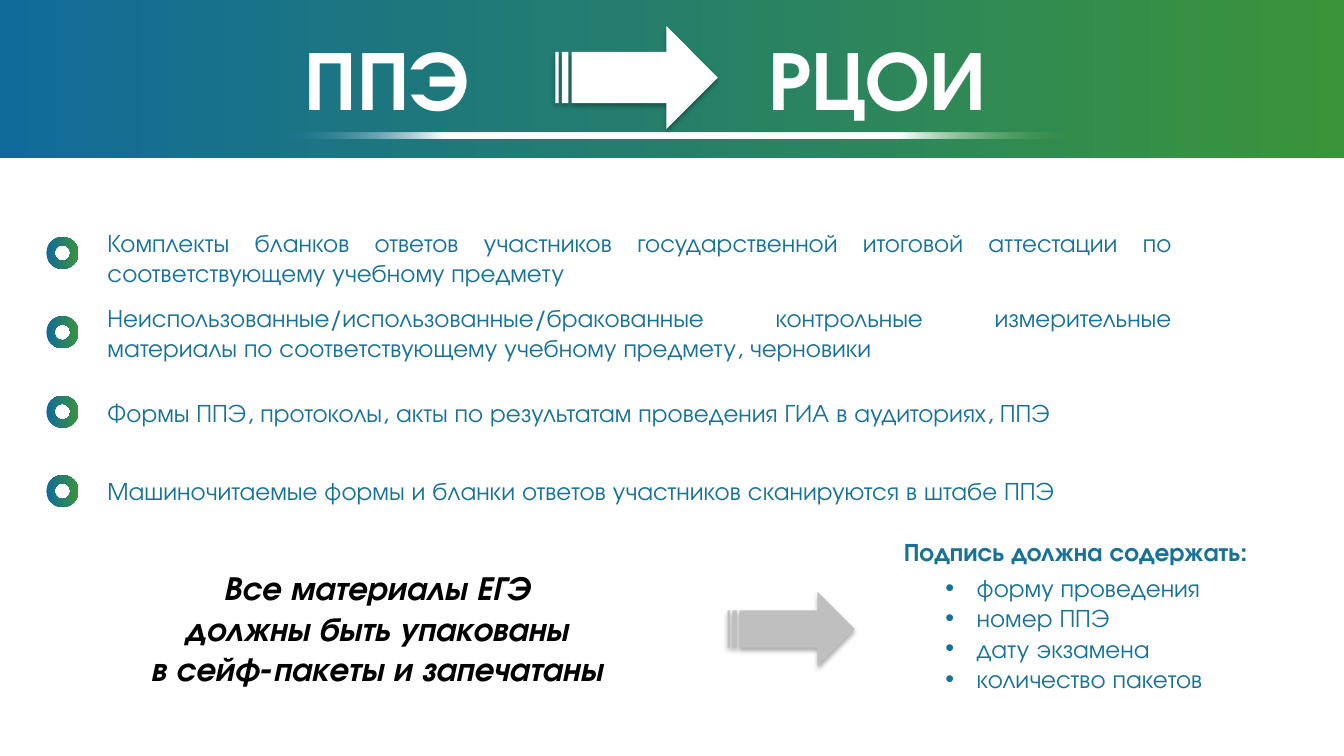
import lxml.etree
import pptx
import pptx.dml.color
import pptx.enum.shapes
import pptx.enum.text
import pptx.oxml.ns
import pptx.util
from pptx.util import Cm

FONT = "TeX Gyre Adventor"
BLUE, GREEN, TEXT_BLUE = "116B9A", "3B943A", "187298"
SHAPES = pptx.enum.shapes.MSO_SHAPE
ALIGN = pptx.enum.text.PP_ALIGN
ANCHOR = pptx.enum.text.MSO_ANCHOR

DOCUMENTS = [
    (5.61, "Комплекты бланков ответов участников государственной итоговой аттестации "
           "по соответствующему учебному предмету"),
    (7.49, "Неиспользованные/использованные/бракованные контрольные измерительные "
           "материалы по соответствующему учебному предмету, черновики"),
    (9.88, "Формы ППЭ, протоколы, акты по результатам проведения ГИА в аудиториях, ППЭ"),
    (11.86, "Машиночитаемые формы и бланки ответов участников сканируются в штабе ППЭ"),
]
PACKING = ["Все материалы ЕГЭ", "должны быть упакованы", "в сейф-пакеты и запечатаны"]
SIGNATURE = ["форму проведения", "номер ППЭ", "дату экзамена", "количество пакетов"]


def color(hex_value):
    """Turn a hex string into a colour."""
    return pptx.dml.color.RGBColor.from_string(hex_value)


def child(parent, tag, **attributes):
    """Append a DrawingML element to a parent."""
    element = lxml.etree.SubElement(parent, pptx.oxml.ns.qn(tag))
    for name, value in attributes.items():
        element.set(name, str(value))
    return element


def fill_gradient(shape, stops):
    """Fill a shape left to right with (percent, colour, opacity) stops."""
    shape.fill.gradient()
    shape.fill.gradient_angle = 0
    stop_list = next(shape._element.spPr.iter(pptx.oxml.ns.qn("a:gsLst")))
    for old_stop in list(stop_list):
        stop_list.remove(old_stop)
    for percent, hex_value, opacity in stops:
        stop = child(stop_list, "a:gs", pos=percent * 1000)
        tint = child(stop, "a:srgbClr", val=hex_value)
        if opacity < 100:
            child(tint, "a:alpha", val=opacity * 1000)


def place(shape, left, top, width, height):
    """Move and size a shape in centimetres."""
    shape.left, shape.top = Cm(left), Cm(top)
    shape.width, shape.height = Cm(width), Cm(height)


def add_figure(slide, preset, left, top, width, height):
    """Add a preset shape without line or shadow."""
    figure = slide.shapes.add_shape(preset, Cm(left), Cm(top), Cm(width), Cm(height))
    figure.line.fill.background()
    figure.shadow.inherit = False
    return figure


def add_arrow(slide, left, top, width, height, hex_value):
    """Add a striped arrow with a soft shadow below it."""
    arrow = add_figure(slide, SHAPES.STRIPED_RIGHT_ARROW, left, top, width, height)
    arrow.fill.solid()
    arrow.fill.fore_color.rgb = color(hex_value)
    effects = arrow._element.spPr.find(pptx.oxml.ns.qn("a:effectLst"))
    shadow = child(effects, "a:outerShdw", blurRad=pptx.util.Pt(3.5),
                   dist=pptx.util.Pt(2.2), dir=5400000, algn="t", rotWithShape=0)
    child(child(shadow, "a:srgbClr", val="000000"), "a:alpha", val=32000)


def write(frame, lines, size, hex_value, align, bold=False, italic=False, bullet=None):
    """Write one formatted paragraph per line."""
    frame.word_wrap = True
    frame.auto_size = pptx.enum.text.MSO_AUTO_SIZE.NONE
    for index, line in enumerate(lines):
        paragraph = frame.paragraphs[0] if index == 0 else frame.add_paragraph()
        paragraph.text = line
        paragraph.alignment = align
        paragraph.space_before = pptx.util.Pt(0)
        if bullet:
            properties = paragraph._p.get_or_add_pPr()
            properties.set("marL", str(Cm(0.79)))
            properties.set("indent", str(-Cm(0.79)))
            child(properties, "a:buFont", typeface="Arial")
            child(properties, "a:buChar", char=bullet)
        style_font(paragraph.font, size, hex_value, bold, italic)


def style_font(font, size, hex_value, bold, italic):
    """Set the face, size, colour and weight of a font."""
    font.name = FONT
    font.size = pptx.util.Pt(size)
    font.bold, font.italic = bold, italic
    font.color.rgb = color(hex_value)


def add_text(slide, left, top, width, height, lines, *style, **options):
    """Add a wrapped text box."""
    box = slide.shapes.add_textbox(Cm(left), Cm(top), Cm(width), Cm(height))
    write(box.text_frame, lines, *style, **options)


def add_banner(slide):
    """Make the title a gradient banner with an arrow and a glowing rule."""
    banner = slide.shapes.title
    place(banner, 0, -0.1, 33.87, 4.09)
    fill_gradient(banner, [(0, BLUE, 100), (100, GREEN, 100)])
    frame = banner.text_frame
    frame.vertical_anchor = ANCHOR.MIDDLE
    frame.margin_left = Cm(7.68)
    properties = frame.paragraphs[0]._p.get_or_add_pPr()
    child(child(properties, "a:tabLst"), "a:tab", pos=Cm(11.68), algn="l")
    write(frame, ["ППЭ\tРЦОИ"], 60, "FFFFFF", ALIGN.LEFT, bold=True)
    rule = add_figure(slide, SHAPES.RECTANGLE, 6.73, 3.35, 20.42, 0.13)
    fill_gradient(rule, [(1, BLUE, 0), (22, "FFFFFF", 100),
                         (78, "FFFFFF", 100), (100, GREEN, 0)])
    add_arrow(slide, 14, 0.66, 4.09, 2.59, "FFFFFF")


def add_documents(slide):
    """List the documents, each beside a ring marker."""
    for index, (top, document) in enumerate(DOCUMENTS):
        ring = add_figure(slide, SHAPES.DONUT, 1.17, 5.97 + 2 * index, 0.81, 0.81)
        fill_gradient(ring, [(0, BLUE, 100), (100, GREEN, 100)])
        add_text(slide, 2.46, top, 27.33, 1.02, [document], 18, TEXT_BLUE, ALIGN.JUSTIFY)


def add_signature(slide):
    """Show what the signature on the packets must contain."""
    add_text(slide, 22.53, 13.39, 10.03, 1.02, ["Подпись должна содержать:"],
             18, TEXT_BLUE, ALIGN.JUSTIFY, bold=True)
    contents = slide.placeholders[1]
    place(contents, 23.57, 14.3, 7.9, 3.33)
    write(contents.text_frame, SIGNATURE, 18, TEXT_BLUE, ALIGN.LEFT, bullet="•")


def main():
    """Build the slide and save it."""
    deck = pptx.Presentation()
    deck.slide_width, deck.slide_height = Cm(33.87), Cm(19.05)
    slide = deck.slides.add_slide(deck.slide_layouts[1])
    add_banner(slide)
    add_documents(slide)
    add_text(slide, 0.86, 14.17, 17.25, 3.33, PACKING, 24, "000000", ALIGN.CENTER,
             bold=True, italic=True)
    add_arrow(slide, 18.34, 14.91, 3.2, 1.88, "BFBFBF")
    add_signature(slide)
    deck.save("out.pptx")


if __name__ == "__main__":
    main()
